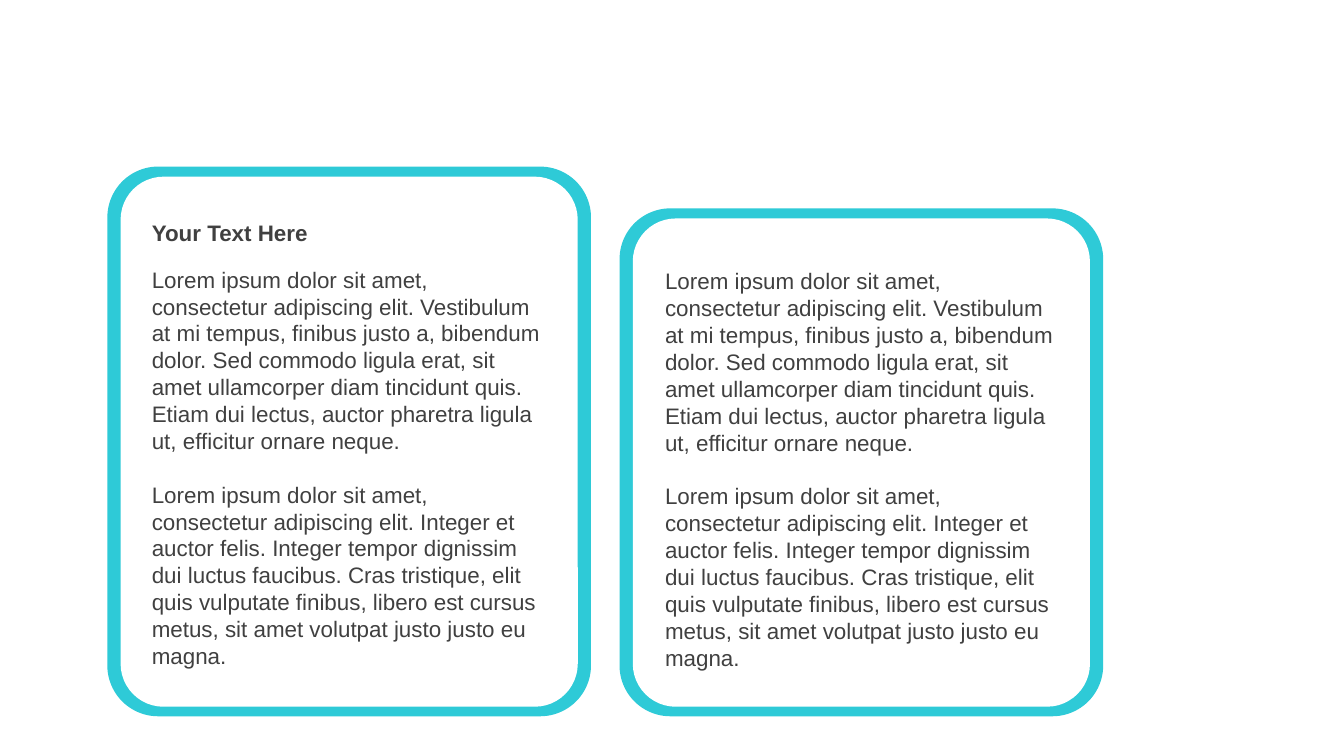
from pptx import Presentation
from pptx import util as u
from pptx.dml.color import RGBColor
from pptx.enum import shapes, text

COLORS = {"frame": "2ECAD7", "paper": "FFFFFF", "ink": "404040"}
FORMAT = {"name": "Arial", "size": u.Pt(12)}
HEAD = "Your Text Here"
BODY = [
    "Lorem ipsum dolor sit amet, consectetur adipiscing elit. Vestibulum at mi "
    "tempus, finibus justo a, bibendum dolor. Sed commodo ligula erat, sit amet "
    "ullamcorper diam tincidunt quis. Etiam dui lectus, auctor pharetra ligula "
    "ut, efficitur ornare neque.",
    "Lorem ipsum dolor sit amet, consectetur adipiscing elit. Integer et auctor "
    "felis. Integer tempor dignissim dui luctus faucibus. Cras tristique, elit "
    "quis vulputate finibus, libero est cursus metus, sit amet volutpat justo "
    "justo eu magna.",
]

deck = Presentation()
deck.slide_width, deck.slide_height = u.Cm(25.4), u.Cm(14.29)
slide = deck.slides.add_slide(deck.slide_layouts[6])


def add_card(left, top, width, base, curve, color):
    card = slide.shapes.add_shape(
        shapes.MSO_SHAPE.ROUNDED_RECTANGLE,
        u.Cm(left), u.Cm(top), u.Cm(width), u.Cm(base - top))
    card.adjustments[0] = curve
    card.shadow.inherit = False
    card.fill.solid()
    card.fill.fore_color.rgb = RGBColor.from_string(COLORS[color])
    card.line.fill.background()


def add_text(left, top, height, lines, bold=False):
    box = slide.shapes.add_textbox(
        u.Cm(left), u.Cm(top), u.Cm(7.87), u.Cm(height))
    frame = box.text_frame
    frame.word_wrap = True
    frame.auto_size = text.MSO_AUTO_SIZE.SHAPE_TO_FIT_TEXT
    for i, line in enumerate(lines):
        para = frame.paragraphs[0] if i == 0 else frame.add_paragraph()
        if i:
            para.space_before = u.Pt(14.4)  # one line of space
        run = para.add_run()
        run.text = line
        for key, value in {**FORMAT, "bold": bold}.items():
            setattr(run.font, key, value)
        run.font.color.rgb = RGBColor.from_string(COLORS["ink"])


# Framed cards, right then left, standing on one base line
for left, top in [(11.71, 3.94), (2.03, 3.15)]:
    add_card(left, top, 9.14, 13.54, 0.105, "frame")
    add_card(left + 0.25, top + 0.19, 8.64, 13.36, 0.094, "paper")

# Body text in both cards, heading in the left one
for left, top in [(2.62, 4.9), (12.32, 4.93)]:
    add_text(left, top, 7.95, BODY)
add_text(2.62, 4.01, 0.76, [HEAD], bold=True)

deck.save("out.pptx")
